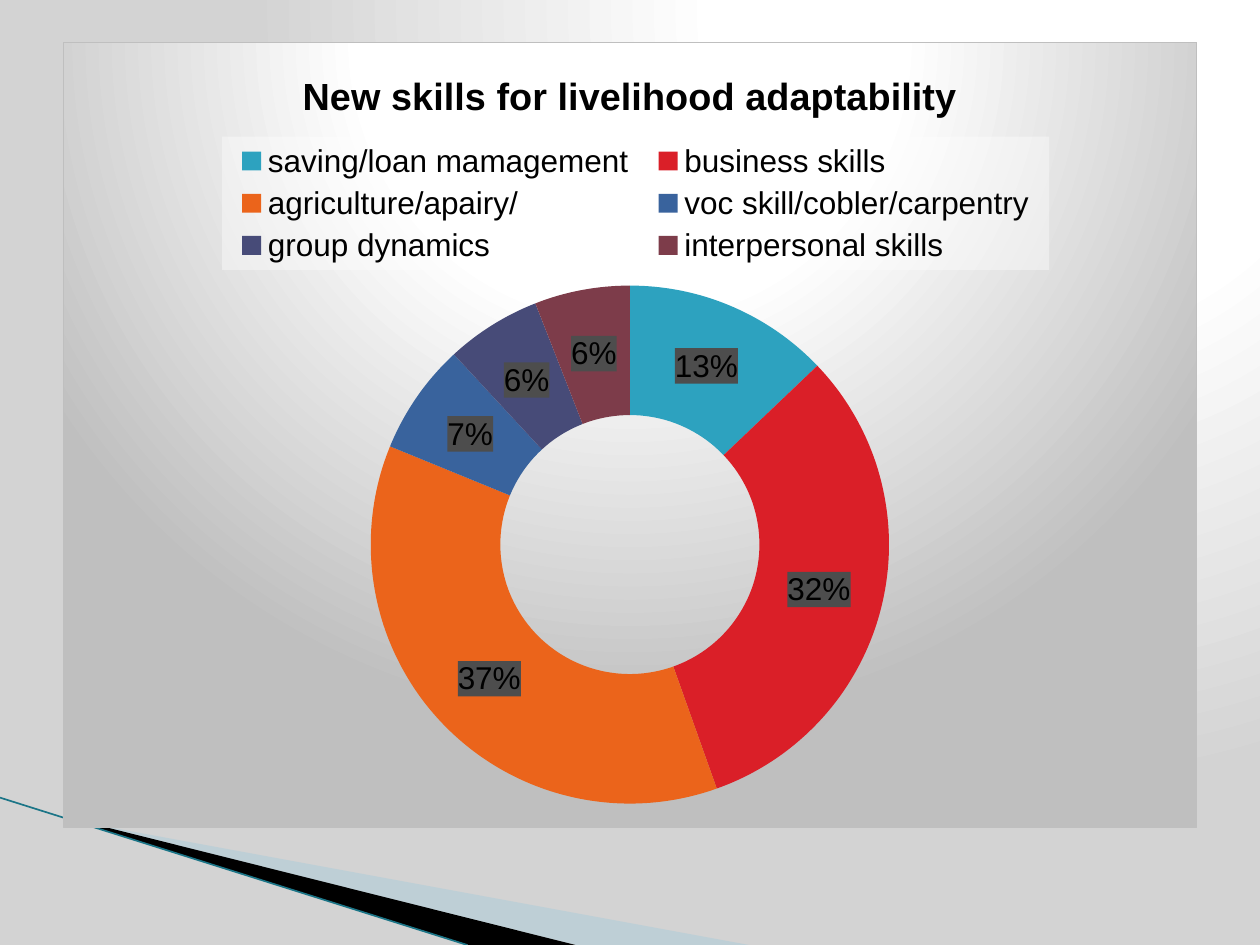
import pptx
import pptx.chart.data
import pptx.dml.color
import pptx.enum.chart
import pptx.enum.shapes
import pptx.oxml
import pptx.oxml.ns
import pptx.util
from pptx.util import Cm, Pt

COLORS = {
    "text": "000000", "wedge": "000000", "pale_wedge": "A0CBDC", "edge": "1B7587",
    "white": "FFFFFF", "backdrop": "D3D3D3", "panel": "BFBFBF", "label": "4D4D4D",
}
SKILLS = [
    ("saving/loan mamagement", 13, "2DA2BF"),
    ("business skills", 32, "DA1F28"),
    ("agriculture/apairy/", 37, "EB641B"),
    ("voc skill/cobler/carpentry", 7, "39639D"),
    ("group dynamics", 6, "474B78"),
    ("interpersonal skills", 6, "7D3C4A"),
]
NS = pptx.oxml.ns.nsdecls("a", "c")
qn = pptx.oxml.ns.qn
rgb = pptx.dml.color.RGBColor.from_string


def circle_gradient(white_until, outer, l, t, r, b):
    """XML of a round gradient, white at its focus; the focus is in percent insets."""
    stops = "".join(
        f'<a:gs pos="{pos * 1000}"><a:srgbClr val="{color}"/></a:gs>'
        for pos, color in ((0, COLORS["white"]), (white_until, COLORS["white"]), (100, outer)))
    return (f'<a:gradFill {NS} rotWithShape="1"><a:gsLst>{stops}</a:gsLst><a:path path="circle">'
            f'<a:fillToRect l="{l * 1000}" t="{t * 1000}" r="{r * 1000}" b="{b * 1000}"/>'
            f'</a:path></a:gradFill>')


def manual_layout(x, y, w, h, target=""):
    """Chart layout element; lengths are fractions of the chart."""
    return pptx.oxml.parse_xml(
        f'<c:layout {NS}><c:manualLayout>{target}<c:xMode val="edge"/><c:yMode val="edge"/>'
        f'<c:x val="{x}"/><c:y val="{y}"/><c:w val="{w}"/><c:h val="{h}"/>'
        f'</c:manualLayout></c:layout>')


deck = pptx.Presentation()
deck.slide_width, deck.slide_height = Cm(25.4), Cm(19.05)
slide = deck.slides.add_slide(deck.slide_layouts[6])

# Background
slide.background.fill.solid()
plain_fill = slide._element.find(".//" + qn("p:bgPr")).find(qn("a:solidFill"))
plain_fill.getparent().replace(
    plain_fill, pptx.oxml.parse_xml(circle_gradient(40, COLORS["backdrop"], 65, 0, 0, 98)))

# Corner decoration
wedges = [
    ("pale_wedge", 40, [(1.4, 16.53), (15.1, 19.05), (11.6, 19.05), (1.4, 16.51)]),
    ("wedge", 100, [(1.35, 16.48), (11.6, 19.05), (9.45, 19.05), (1.37, 16.51)]),
]
for color, opacity, corners in wedges:
    points = [(Cm(x), Cm(y)) for x, y in corners]
    outline = slide.shapes.build_freeform(*points[0])
    outline.add_line_segments(points[1:], close=True)
    wedge = outline.convert_to_shape()
    wedge.shadow.inherit = False
    wedge.line.fill.background()
    wedge.fill.solid()
    wedge.fill.fore_color.rgb = rgb(COLORS[color])
    if opacity < 100:
        tint = wedge._element.spPr.find(qn("a:solidFill")).find(qn("a:srgbClr"))
        tint.append(pptx.oxml.parse_xml(f'<a:alpha {NS} val="{opacity * 1000}"/>'))

edge = slide.shapes.add_connector(
    pptx.enum.shapes.MSO_CONNECTOR.STRAIGHT, Cm(0), Cm(16.08), Cm(9.42), Cm(19.05))
edge.line.color.rgb = rgb(COLORS["edge"])
edge.line.width = Pt(0.95)
edge._element.spPr.append(pptx.oxml.parse_xml(f"<a:effectLst {NS}/>"))

# Doughnut chart
skill_data = pptx.chart.data.CategoryChartData()
skill_data.categories = [name for name, _, _ in SKILLS]
skill_data.add_series("Series 1", [value for _, value, _ in SKILLS])
chart = slide.shapes.add_chart(
    pptx.enum.chart.XL_CHART_TYPE.DOUGHNUT,
    Cm(1.27), Cm(0.84), Cm(22.86), Cm(15.85), skill_data).chart
chart.font.size = Pt(18)
chart.font.name = "Arial"
chart.font.color.rgb = rgb(COLORS["text"])
chart._chartSpace.find(qn("c:chart")).addnext(pptx.oxml.parse_xml(
    f'<c:spPr {NS}>{circle_gradient(39, COLORS["panel"], 50, -80, 50, 180)}'
    f'<a:ln w="9525"><a:solidFill><a:srgbClr val="{COLORS["panel"]}"/></a:solidFill></a:ln>'
    f'</c:spPr>'))

chart.has_title = True
chart.chart_title.include_in_layout = False
heading = chart.chart_title.text_frame.paragraphs[0]
heading.text = "New skills for livelihood adaptability"
heading_font = heading.runs[0].font
heading_font.size, heading_font.bold, heading_font.name = Pt(21.6), True, "Arial"
heading_font.color.rgb = rgb(COLORS["text"])

# Legend
chart.has_legend = True
legend = chart.legend
legend.position = pptx.enum.chart.XL_LEGEND_POSITION.TOP
legend.include_in_layout = False
legend.font.size = Pt(18)
legend.font.name = "Arial"
legend.font.color.rgb = rgb(COLORS["text"])
legend._element.find(qn("c:overlay")).addnext(pptx.oxml.parse_xml(
    f'<c:spPr {NS}><a:solidFill><a:srgbClr val="{COLORS["white"]}"><a:alpha val="39000"/>'
    f'</a:srgbClr></a:solidFill></c:spPr>'))

plot_area = chart._chartSpace.find(".//" + qn("c:plotArea"))
for part in (legend._element, plot_area):
    for layout in part.findall(qn("c:layout")):
        part.remove(layout)
legend._element.find(qn("c:legendPos")).addnext(manual_layout(0.14, 0.12, 0.73, 0.17))
plot_area.insert(0, manual_layout(0.27, 0.31, 0.46, 0.66, '<c:layoutTarget val="inner"/>'))

# Slices and percentages
chart.plots[0].vary_by_categories = True
series = chart.plots[0].series[0]
for index, (_, _, color) in enumerate(SKILLS):
    slice_format = series.points[index].format
    slice_format.fill.solid()
    slice_format.fill.fore_color.rgb = rgb(color)
    slice_format.line.fill.background()

percentages = series.data_labels
percentages.show_value = False
percentages.show_percentage = True
percentages.number_format = "0%"
percentages.number_format_is_linked = False
percentages.font.size = Pt(18)
percentages.font.name = "Arial"
percentages.font.color.rgb = rgb(COLORS["text"])
percentages._element.find(qn("c:txPr")).addprevious(pptx.oxml.parse_xml(
    f'<c:spPr {NS}><a:solidFill><a:srgbClr val="{COLORS["label"]}"/></a:solidFill></c:spPr>'))

deck.save("out.pptx")
